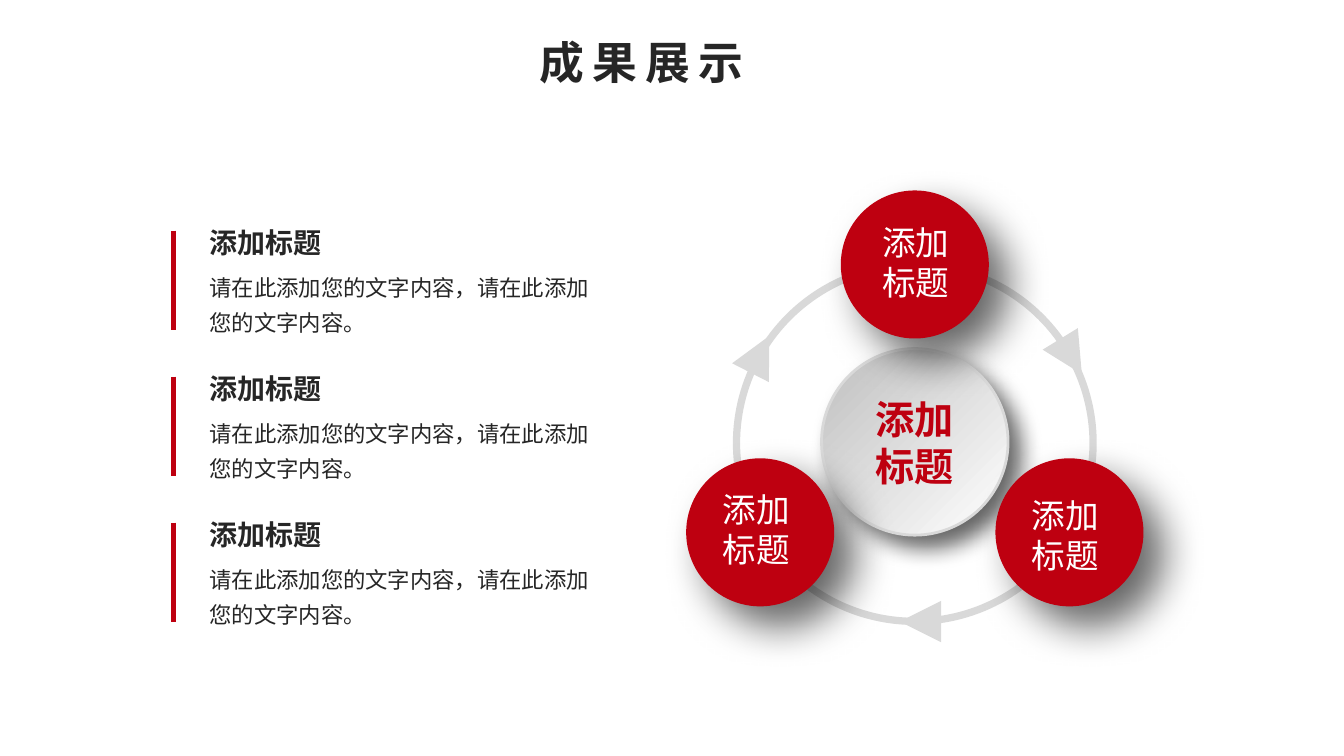
from dataclasses import dataclass
from math import cos, radians, sin

from lxml import etree
from pptx import Presentation
from pptx.dml.color import RGBColor
from pptx.enum.shapes import MSO_CONNECTOR, MSO_SHAPE
from pptx.enum.text import PP_ALIGN
from pptx.oxml.ns import qn
from pptx.util import Cm, Pt

DONUT, ELLIPSE, TRIANGLE = MSO_SHAPE.DONUT, MSO_SHAPE.OVAL, MSO_SHAPE.ISOSCELES_TRIANGLE
STRAIGHT = MSO_CONNECTOR.STRAIGHT
LEFT, CENTER, JUSTIFY = PP_ALIGN.LEFT, PP_ALIGN.CENTER, PP_ALIGN.JUSTIFY


@dataclass(frozen=True)
class Theme:
    font: str = "Noto Sans CJK SC"
    red: str = "BE0010"
    dark: str = "262626"
    white: str = "FFFFFF"
    gray: str = "D9D9D9"
    gray_deep: str = "BFBFBF"
    shadow: str = "000000"
    title_size: int = 32
    hub_size: int = 28
    disc_size: int = 24
    heading_size: int = 20
    body_size: int = 16


THEME = Theme()
LABEL = "添加标题"
BODY = "请在此添加您的文字内容，请在此添加您的文字内容。"


def color(value):
    return RGBColor.from_string(value)


def add_text(slide, text, left, top, width, height, *, size, fill=THEME.dark,
             bold=False, align=LEFT, line_spacing=None, tracking=None):
    """Place a text box, in cm; each line of the text is a paragraph."""
    box = slide.shapes.add_textbox(Cm(left), Cm(top), Cm(width), Cm(height))
    frame = box.text_frame
    frame.word_wrap = True
    frame.text = text
    for paragraph in frame.paragraphs:
        paragraph.alignment = align
        paragraph.line_spacing = line_spacing
        run = paragraph.runs[0]
        run.font.size, run.font.bold = Pt(size), bold
        run.font.color.rgb = color(fill)
        run.font.name = THEME.font
        properties = run.font._element
        etree.SubElement(properties, qn("a:ea"), typeface=THEME.font)
        if tracking:
            properties.set("spc", str(tracking * 100))


def add_centered(slide, kind, x, y, size, fill=None, line=None):
    """Place a square preset shape around a centre point, in cm."""
    shape = slide.shapes.add_shape(kind, Cm(x - size / 2), Cm(y - size / 2), Cm(size), Cm(size))
    shape.shadow.inherit = False
    if fill:
        shape.fill.solid()
        shape.fill.fore_color.rgb = color(fill)
    if line:
        shape.line.color.rgb = color(line)
        shape.line.width = Pt(2)
    else:
        shape.line.fill.background()
    return shape


def add_shadow(shape, blur, distance):
    """Cast a soft shadow to the lower right."""
    effects = shape._element.spPr.find(qn("a:effectLst"))
    shadow = etree.SubElement(effects, qn("a:outerShdw"), blurRad=str(Pt(blur)),
                              dist=str(Pt(distance)), dir="2700000", algn="tl", rotWithShape="0")
    tint = etree.SubElement(shadow, qn("a:srgbClr"), val=THEME.shadow)
    etree.SubElement(tint, qn("a:alpha"), val="60000")


def on_circle(x, y, radius, angle):
    """Point at an angle in degrees, clockwise from the top."""
    return x + radius * sin(radians(angle)), y - radius * cos(radians(angle))


def draw_title(slide, left, top, width, height):
    add_text(slide, "成果展示", left, top, width, height, size=THEME.title_size,
             bold=True, align=JUSTIFY, tracking=6)


def draw_text_list(slide, left, top, width, pitch, count):
    indent = 0.66
    for row in range(count):
        row_top = top + row * pitch
        # Red bar
        bar = slide.shapes.add_connector(STRAIGHT, Cm(left), Cm(row_top + 0.25),
                                         Cm(left), Cm(row_top + 2.75))
        bar.line.color.rgb = color(THEME.red)
        bar.line.width = Pt(3)
        etree.SubElement(bar._element.spPr, qn("a:effectLst"))
        # Heading and body
        add_text(slide, LABEL, left + indent, row_top, 8.48, 1.11,
                 size=THEME.heading_size, bold=True)
        add_text(slide, BODY, left + indent, row_top + 1.02, width - indent, 1.96,
                 size=THEME.body_size, line_spacing=1.3)


def draw_cycle(slide, left, top, diameter):
    x, y = left + diameter / 2, top + diameter / 2
    orbit = 4.5

    # Ring with arrowheads: angle on the ring, rotation of the triangle
    ring = add_centered(slide, DONUT, x, y, diameter, THEME.gray)
    ring.adjustments[0] = 0.02
    for angle, rotation in ((61, 148.5), (178.2, 270), (299.8, 27.1)):
        arrowhead = add_centered(slide, TRIANGLE, *on_circle(x, y, orbit, angle), 1.04, THEME.gray)
        arrowhead.rotation = rotation

    # Hub
    hub = add_centered(slide, ELLIPSE, x, y - 0.03, 4.7, line=THEME.gray)
    hub.fill.gradient()
    hub.fill.gradient_angle = 135
    for stop, tone in zip(hub.fill.gradient_stops, (THEME.white, THEME.gray_deep)):
        stop.color.rgb = color(tone)
    add_shadow(hub, 16, 12)
    add_text(slide, "添加\n标题", x - 1.59, y - 1.34, 3.18, 2.64, size=THEME.hub_size,
             fill=THEME.red, bold=True, align=CENTER)

    # Discs: angle on the ring, shift of the label from the centre
    for angle, shift_x, shift_y in ((0, 0.14, -0.04), (240, 0.01, -0.06), (120, 0.01, 0.09)):
        disc_x, disc_y = on_circle(x, y, orbit, angle)
        disc = add_centered(slide, ELLIPSE, disc_x, disc_y, 3.66, THEME.red, THEME.red)
        add_shadow(disc, 30, 20)
        add_text(slide, LABEL, disc_x + shift_x - 1.21, disc_y + shift_y - 1.16, 2.42, 2.31,
                 size=THEME.disc_size, fill=THEME.white)


def main():
    presentation = Presentation()
    presentation.slide_width, presentation.slide_height = Cm(33.87), Cm(19.05)
    slide = presentation.slides.add_slide(presentation.slide_layouts[6])
    draw_cycle(slide, left=18.47, top=6.58, diameter=9.17)
    draw_text_list(slide, left=4.37, top=5.56, width=10.87, pitch=3.68, count=3)
    draw_title(slide, left=13.34, top=0.76, width=6.6, height=1.63)
    presentation.save("out.pptx")


if __name__ == "__main__":
    main()
